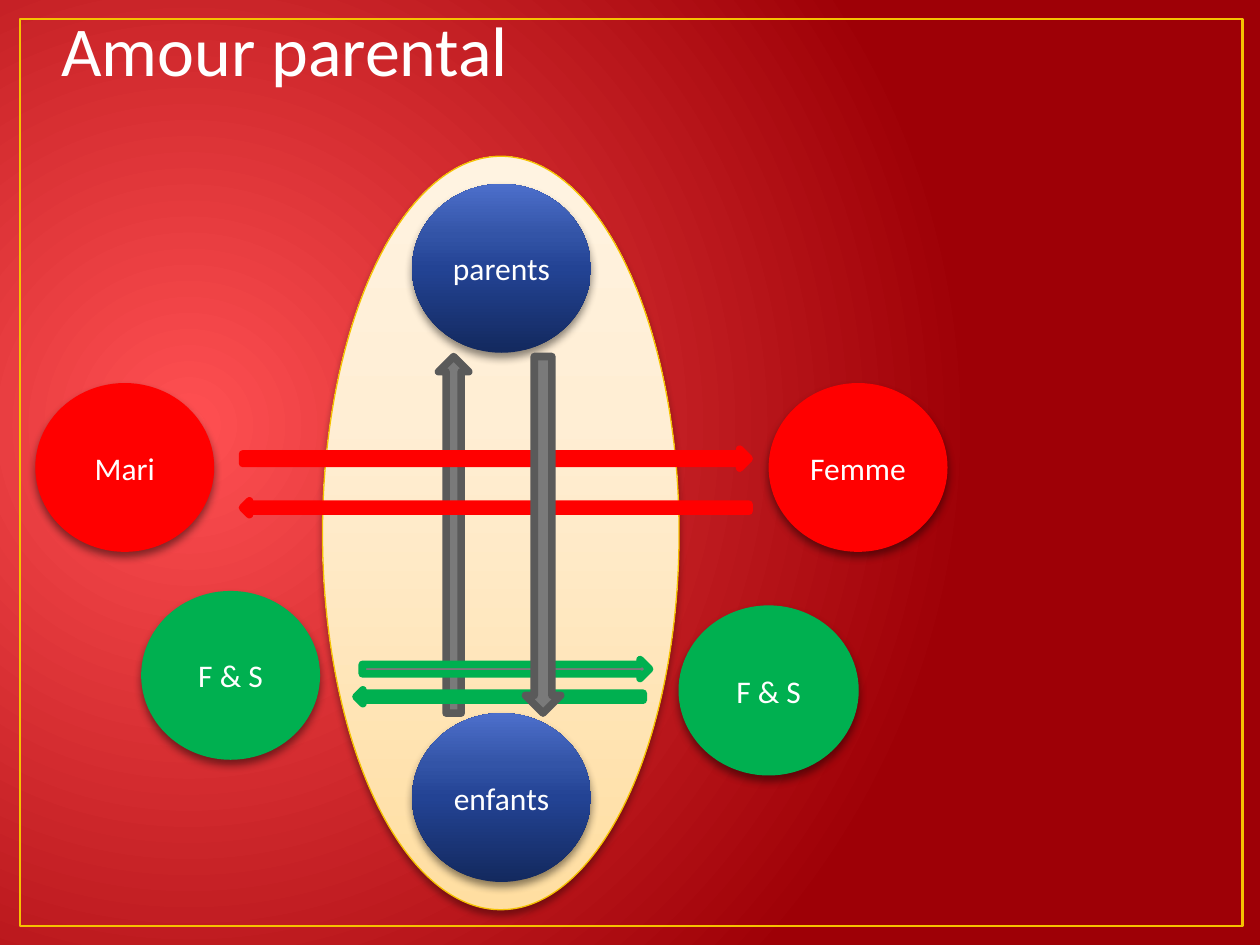
from dataclasses import dataclass

from lxml import etree
from pptx import Presentation
from pptx.dml.color import RGBColor
from pptx.enum.shapes import MSO_SHAPE as Shape
from pptx.enum.text import MSO_ANCHOR as Anchor, PP_ALIGN as Align
from pptx.oxml.ns import nsdecls, qn
from pptx.util import Inches, Pt

FONT = "Calibri"
WHITE = RGBColor(0xFF, 0xFF, 0xFF)
GOLD = RGBColor(0xF5, 0xC2, 0x01)
RED = RGBColor(0xFF, 0x00, 0x00)
GREEN = RGBColor(0x00, 0xB0, 0x50)
GRAY = RGBColor(0x7A, 0x7A, 0x7A)
DARK_GRAY = RGBColor(0x5A, 0x5A, 0x5A)

# Gradient stops: (percent, colour)
BACKDROP = [(0, RGBColor(0xFF, 0x50, 0x52)), (100, RGBColor(0x9E, 0x00, 0x06))]
CREAM = [(0, RGBColor(0xFF, 0xDE, 0xA1)), (65, RGBColor(0xFF, 0xEE, 0xD4)),
         (100, RGBColor(0xFF, 0xF3, 0xE1))]
BLUE = [(0, RGBColor(0x13, 0x29, 0x5E)), (50, RGBColor(0x23, 0x43, 0x94)),
        (70, RGBColor(0x33, 0x54, 0xA7)), (100, RGBColor(0x4D, 0x6F, 0xCB))]

UPWARD = '<a:lin ang="16200000" scaled="0"/>'
RADIAL = ('<a:path path="circle"><a:fillToRect l="15000" t="50000" '
          'r="85000" b="60000"/></a:path>')
CIRCLE_WIDTH, CIRCLE_HEIGHT = 1.42, 1.34


@dataclass
class Circle:
    label: str
    left: float
    top: float
    fill: RGBColor | list
    outline: RGBColor | None = None


@dataclass
class Arrow:
    left: float
    top: float
    width: float
    height: float
    rotation: int
    fill: RGBColor
    outline: RGBColor


def set_gradient(fill, element, stops: list, direction: str) -> None:
    fill.gradient()
    old = next(element.iter(qn("a:gradFill")))
    stop_xml = "".join(
        f'<a:gs pos="{percent * 1000}"><a:srgbClr val="{color}"/></a:gs>'
        for percent, color in stops)
    new = etree.fromstring(
        f'<a:gradFill {nsdecls("a")} rotWithShape="1">'
        f'<a:gsLst>{stop_xml}</a:gsLst>{direction}</a:gradFill>')
    old.getparent().replace(old, new)


def add_shadow(shape, opacity: int, blur: float) -> None:
    effects = shape.element.spPr.find(qn("a:effectLst"))
    effects.append(etree.fromstring(
        f'<a:outerShdw {nsdecls("a")} blurRad="{Pt(blur)}" dist="{Pt(3)}" '
        'dir="5400000" rotWithShape="0"><a:srgbClr val="000000">'
        f'<a:alpha val="{opacity * 1000}"/></a:srgbClr></a:outerShdw>'))


def add_figure(slide, kind, left: float, top: float, width: float,
               height: float, fill, outline, line_width: float = 0.75):
    shape = slide.shapes.add_shape(
        kind, Inches(left), Inches(top), Inches(width), Inches(height))
    if fill is None:
        shape.fill.background()
    elif isinstance(fill, list):
        set_gradient(shape.fill, shape.element, fill, UPWARD)
    else:
        shape.fill.solid()
        shape.fill.fore_color.rgb = fill
    if outline is None:
        shape.line.fill.background()
    else:
        shape.line.color.rgb = outline
        shape.line.width = Pt(line_width)
    shape.shadow.inherit = False
    return shape


def write(shape, text: str, size: int, align, anchor):
    shape.text_frame.word_wrap = True
    shape.text_frame.vertical_anchor = anchor
    paragraph = shape.text_frame.paragraphs[0]
    paragraph.text = text
    paragraph.alignment = align
    paragraph.font.name = FONT
    paragraph.font.size = Pt(size)
    paragraph.font.color.rgb = WHITE
    return paragraph


def add_circle(slide, circle: Circle) -> None:
    shape = add_figure(slide, Shape.OVAL, circle.left, circle.top, CIRCLE_WIDTH,
                       CIRCLE_HEIGHT, circle.fill, circle.outline)
    add_shadow(shape, 45, 5)
    write(shape, circle.label, 18, Align.CENTER, Anchor.MIDDLE)


def add_arrow(slide, arrow: Arrow) -> None:
    shape = add_figure(slide, Shape.DOWN_ARROW, arrow.left, arrow.top, arrow.width,
                       arrow.height, arrow.fill, arrow.outline, 4.33)
    shape.rotation = arrow.rotation


CHILD_TO_PARENT = Arrow(3.48, 2.83, 0.24, 2.83, 180, GRAY, DARK_GRAY)
PARENT_TO_CHILD = Arrow(4.17, 2.83, 0.28, 2.83, 0, GRAY, DARK_GRAY)
GENERATIONS = [Circle("parents", 3.27, 1.46, BLUE), Circle("enfants", 3.27, 5.66, BLUE)]
PEERS = [
    Circle("F & S", 5.39, 4.81, GREEN, GREEN),
    Circle("F & S", 1.12, 4.69, GREEN),
    Circle("Femme", 6.1, 3.04, RED),
    Circle("Mari", 0.28, 3.04, RED),
]
PEER_ARROWS = [
    Arrow(3.86, 1.63, 0.15, 4.02, 270, RED, RED),
    Arrow(3.91, 4.39, 0.11, 2.28, 90, GRAY, GREEN),
    Arrow(3.94, 4.17, 0.15, 2.28, 270, GRAY, GREEN),
    Arrow(3.88, 2.02, 0.11, 4.02, 90, RED, RED),
]


def main() -> None:
    presentation = Presentation()
    presentation.slide_width = Inches(10)
    presentation.slide_height = Inches(7.5)
    slide = presentation.slides.add_slide(presentation.slide_layouts[6])

    # Background and frame
    set_gradient(slide.background.fill, slide.element, BACKDROP, RADIAL)
    add_figure(slide, Shape.RECTANGLE, 0.16, 0.15, 9.7, 7.2, None, GOLD, 1.5)

    # Title
    title = slide.shapes.add_textbox(Inches(0.39), 0, Inches(9.26), Inches(0.99))
    paragraph = write(title, "Amour parental", 40, Align.LEFT, Anchor.TOP)
    paragraph.space_before = Pt(4)

    # Parents and children inside the oval
    oval = add_figure(slide, Shape.OVAL, 2.56, 1.24, 2.83, 5.98, CREAM, GOLD)
    add_shadow(oval, 35, 4)
    for circle in GENERATIONS:
        add_circle(slide, circle)
    add_arrow(slide, CHILD_TO_PARENT)

    # Spouses and siblings, with the arrows between them
    for circle in PEERS:
        add_circle(slide, circle)
    for arrow in PEER_ARROWS:
        add_arrow(slide, arrow)
    add_arrow(slide, PARENT_TO_CHILD)

    presentation.save("out.pptx")


if __name__ == "__main__":
    main()
